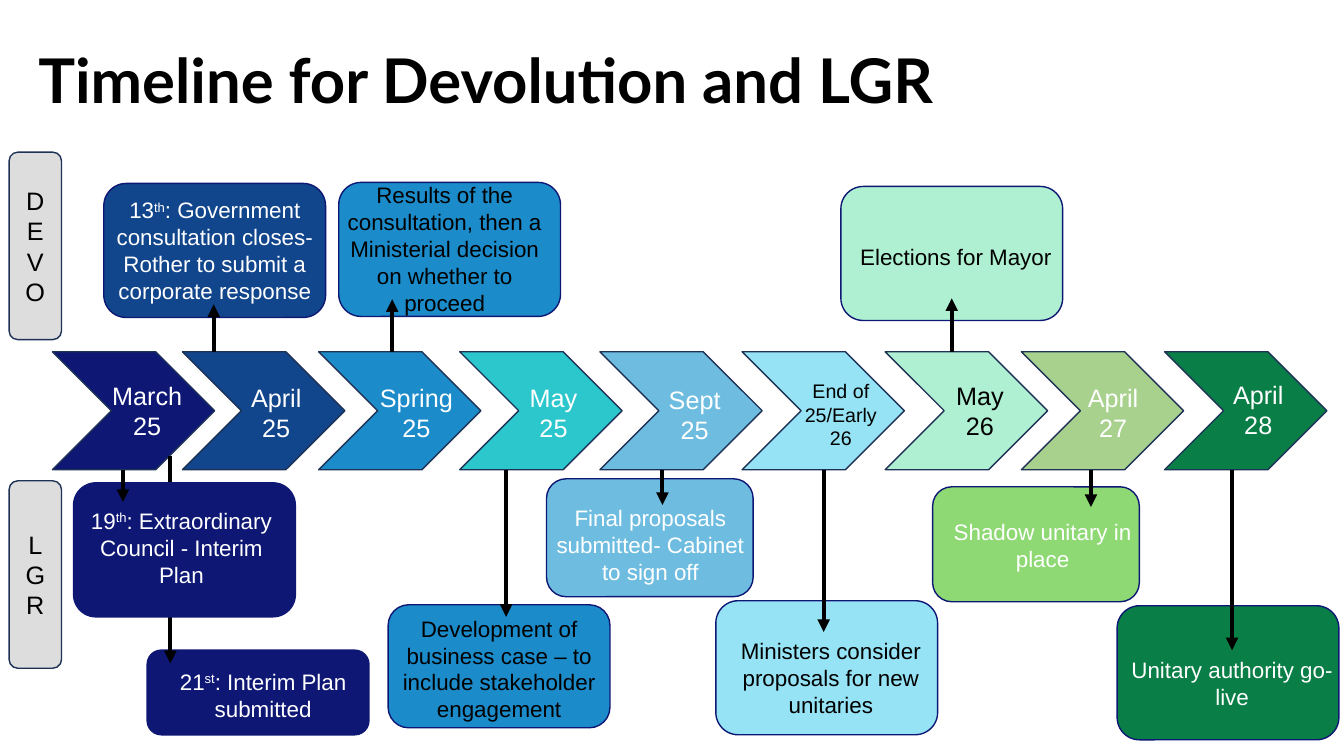
from pptx import Presentation
from pptx.dml.color import RGBColor
from pptx.enum.shapes import MSO_CONNECTOR, MSO_SHAPE
from pptx.enum.text import MSO_ANCHOR, MSO_AUTO_SIZE, PP_ALIGN
from pptx.oxml.ns import qn
from pptx.util import Inches, Pt
from lxml import etree

CHEVRON = MSO_SHAPE.CHEVRON
ROUNDED = MSO_SHAPE.ROUNDED_RECTANGLE
STRAIGHT = MSO_CONNECTOR.STRAIGHT
MIDDLE = MSO_ANCHOR.MIDDLE
CENTER, LEFT = PP_ALIGN.CENTER, PP_ALIGN.LEFT
GROW = MSO_AUTO_SIZE.SHAPE_TO_FIT_TEXT

NAVY, BLUE, AZURE, TEAL = "0E1874", "11458C", "1C8BCA", "2CC6CD"
SKY, ICE, MINT, SAGE = "6EBDE0", "95E3F5", "AFEFD2", "A9D18E"
LIME, GREEN, GREY, SLATE = "8ED973", "097E46", "DDDDDD", "1E3256"
BLACK, WHITE = "000000", "FFFFFF"

CHEVRON_TOP, CHEVRON_WIDTH, CHEVRON_HEIGHT = 3.49, 1.61, 1.17
CHEVRON_BOTTOM = CHEVRON_TOP + CHEVRON_HEIGHT
DATE_WIDTH, CAPTION_WIDTH = 0.94, 2.28

# Chevron left, fill, date, date left, date top, date height, size, text colour
MILESTONES = [
    (0.52, NAVY, "March 25", 0.99, 3.72, 0.71, 18, WHITE),
    (1.81, BLUE, "April 25", 2.27, 3.74, 0.71, 18, WHITE),
    (3.16, AZURE, "Spring 25", 3.66, 3.74, 0.71, 18, WHITE),
    (4.56, TEAL, "May 25", 5.02, 3.74, 0.71, 18, WHITE),
    (5.95, SKY, "Sept 25", 6.42, 3.76, 0.71, 18, WHITE),
    (7.36, ICE, "End of 25/Early 26", 7.87, 3.71, 0.81, 14, BLACK),
    (8.78, MINT, "May 26", 9.25, 3.72, 0.71, 18, BLACK),
    (10.13, SAGE, "April 27", 10.57, 3.74, 0.71, 18, WHITE),
    (11.55, GREEN, "April 28", 12.01, 3.71, 0.71, 18, WHITE),
]

# Card place, fill, caption (^superscript^), caption left, top and height,
# text colour, arrow x, start and end
EVENTS = [
    ((1.46, 6.45, 2.2, 0.84), NAVY, "21^st^: Interim Plan submitted",
     (1.47, 6.58, 0.64), WHITE, (1.69, 4.52, 6.58)),
    ((0.73, 4.79, 2.2, 1.33), NAVY,
     "19^th^: Extraordinary Council - Interim Plan",
     (0.66, 4.98, 0.91), WHITE, (1.22, CHEVRON_BOTTOM, 4.98)),
    ((1.03, 1.82, 2.2, 1.33), BLUE,
     "13^th^: Government consultation closes- Rother to submit a corporate response",
     (0.99, 1.9, 1.18), WHITE, (2.12, CHEVRON_TOP, 3.02)),
    ((3.36, 1.81, 2.2, 1.33), AZURE,
     "Results of the consultation, then a Ministerial decision on whether to proceed",
     (3.27, 1.75, 1.45), BLACK, (3.89, CHEVRON_TOP, 2.97)),
    ((3.85, 6, 2.2, 1.22), AZURE,
     "Development of business case – to include stakeholder engagement",
     (3.81, 6.05, 1.18), BLACK, (5.02, CHEVRON_BOTTOM, 6.12)),
    ((5.42, 4.75, 2.05, 1.17), SKY, "Final proposals submitted- Cabinet to sign off",
     (5.31, 4.95, 0.91), WHITE, (6.57, CHEVRON_BOTTOM, 5.01)),
    ((7.1, 5.96, 2.2, 1.33), ICE, "Ministers consider proposals for new unitaries",
     (7.1, 6.27, 0.91), BLACK, (8.17, CHEVRON_BOTTOM, 6.27)),
    ((8.34, 1.85, 2.2, 1.33), MINT, "Elections for Mayor",
     (8.34, 2.36, 0.37), BLACK, (9.44, CHEVRON_TOP, 2.96)),
    ((9.25, 4.83, 2.05, 1.14), LIME, "Shadow unitary in place",
     (9.2, 5.09, 0.64), WHITE, (10.82, CHEVRON_BOTTOM, 5.03)),
    ((11.08, 6.01, 2.2, 1.33), GREEN, "Unitary authority go-live",
     (11.08, 6.46, 0.64), WHITE, (12.22, CHEVRON_BOTTOM, 6.45)),
]

STREAMS = [("DEVO", 1.51), ("LGR", 4.77)]


def color(value):
    return RGBColor.from_string(value)


def inches(place):
    return [Inches(length) for length in place]


def add_text(frame, text, size, text_color, font="Arial", bold=False, align=CENTER):
    """Fill the first paragraph; parts between ^ marks are superscript."""
    frame.word_wrap = True
    para = frame.paragraphs[0]
    para.alignment = align
    for index, part in enumerate(text.split("^")):
        span = para.add_run()
        span.text = part
        span.font.name = font
        span.font.size = Pt(size)
        span.font.bold = bold
        span.font.color.rgb = color(text_color)
        if index % 2:
            span.font._element.set("baseline", "30000")


def add_panel(page, kind, place, fill, outline):
    panel = page.shapes.add_shape(kind, *inches(place))
    panel.shadow.inherit = False
    panel.fill.solid()
    panel.fill.fore_color.rgb = color(fill)
    panel.line.color.rgb = color(outline)
    panel.line.width = Pt(1)
    return panel


def add_label(page, place, text, size, text_color):
    box = page.shapes.add_textbox(*inches(place))
    add_text(box.text_frame, text, size, text_color)
    box.text_frame.auto_size = GROW


def add_arrow(page, x, start, end):
    arrow = page.shapes.add_connector(STRAIGHT, *inches((x, start, x, end)))
    arrow.line.color.rgb = color(BLACK)
    arrow.line.width = Pt(3)
    etree.SubElement(arrow.line._get_or_add_ln(), qn("a:tailEnd"), type="triangle")
    etree.SubElement(arrow._element.spPr, qn("a:effectLst"))


def add_title(page, text):
    title = page.shapes.title
    title.left, title.top, title.width, title.height = inches((0.28, 0.1, 11.78, 1.45))
    title.text_frame.vertical_anchor = MIDDLE
    add_text(title.text_frame, text, 44, BLACK, font="Lato", bold=True, align=LEFT)
    title.text_frame.paragraphs[0].line_spacing = 0.9


def main():
    deck = Presentation()
    deck.slide_width, deck.slide_height = Inches(13.33), Inches(7.5)
    page = deck.slides.add_slide(deck.slide_layouts[5])
    add_title(page, "Timeline for Devolution and LGR")

    # Row of dated chevrons
    for left, fill, date, date_left, date_top, height, size, text_color in MILESTONES:
        place = (left, CHEVRON_TOP, CHEVRON_WIDTH, CHEVRON_HEIGHT)
        add_panel(page, CHEVRON, place, fill, SLATE)
        add_label(page, (date_left, date_top, DATE_WIDTH, height), date, size, text_color)

    # Side labels for the two streams
    for name, top in STREAMS:
        stream = add_panel(page, ROUNDED, (0.09, top, 0.52, 1.86), GREY, SLATE)
        stream.text_frame.vertical_anchor = MIDDLE
        add_text(stream.text_frame, name, 18, BLACK)

    # Event cards with captions and arrows
    for place, fill, caption, (left, top, height), text_color, arrow in EVENTS:
        add_panel(page, ROUNDED, place, fill, NAVY)
        add_label(page, (left, top, CAPTION_WIDTH, height), caption, 16, text_color)
        add_arrow(page, *arrow)

    deck.save("out.pptx")


if __name__ == "__main__":
    main()
